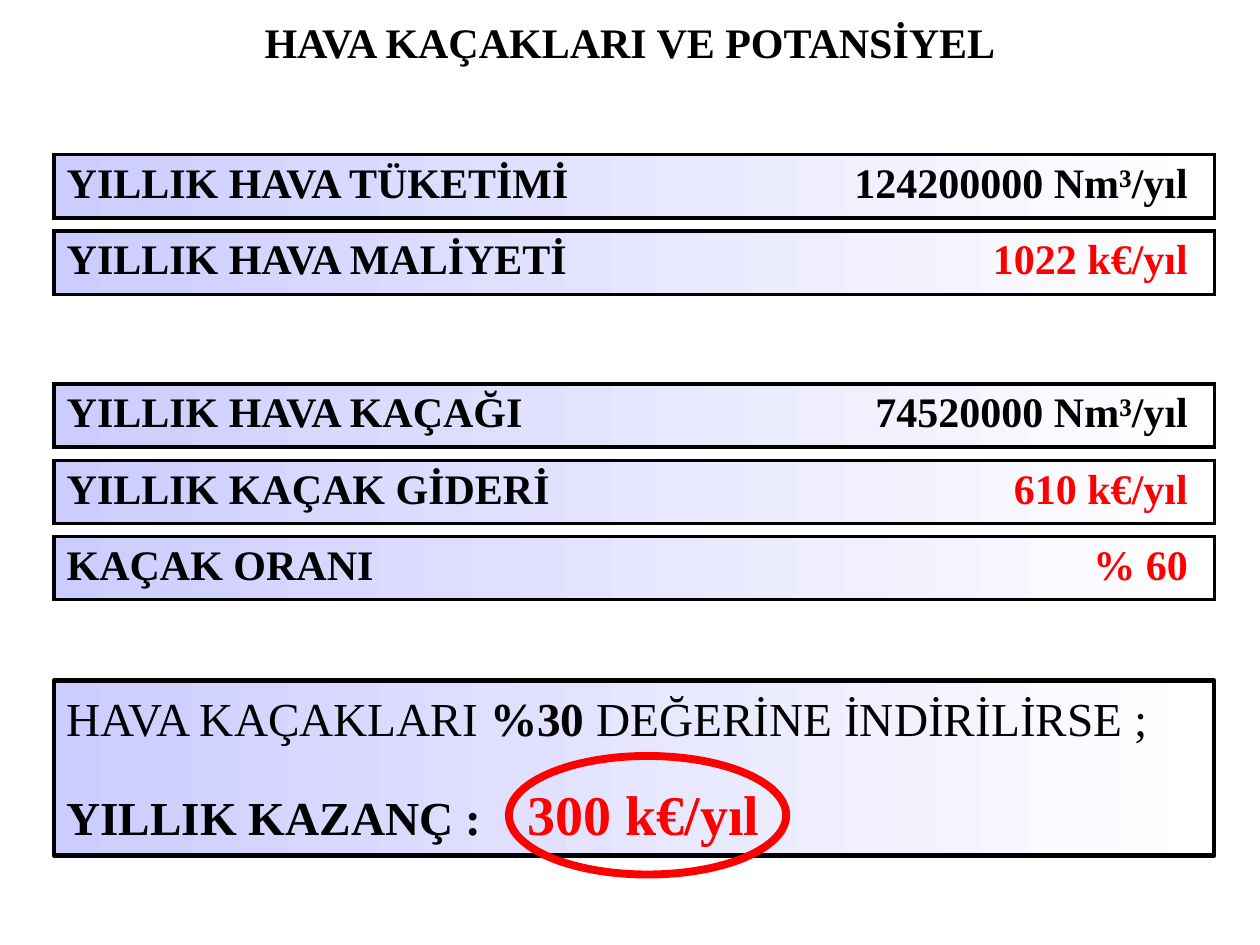
from dataclasses import dataclass

from lxml import etree
from pptx import Presentation
from pptx import util as u
from pptx.dml.color import RGBColor
from pptx.enum import shapes, text
from pptx.oxml.ns import qn


@dataclass(frozen=True)
class Theme:
    font: str = "Times New Roman"
    black: RGBColor = RGBColor(0, 0, 0)
    red: RGBColor = RGBColor(255, 0, 0)
    lilac: RGBColor = RGBColor(204, 204, 255)
    white: RGBColor = RGBColor(255, 255, 255)
    body: int = 24
    note: int = 27
    big: int = 32


class Deck:
    def __init__(self, theme, slide):
        self.theme = theme
        self.slide = slide

    def run(self, para, words, size, color=None, bold=True):
        run = para.add_run()
        run.text = words
        font = run.font
        font.name = self.theme.font
        font.size = u.Pt(size)
        font.bold = bold
        font.color.rgb = color or self.theme.black

    def tab(self, para, place, align):
        """Set one tab stop, measured from the left text edge."""
        stops = etree.SubElement(para._p.get_or_add_pPr(), qn("a:tabLst"))
        etree.SubElement(stops, qn("a:tab"), pos=str(int(place)), algn=align)

    def fade(self, fill):
        """Fill from lilac on the left to white on the right."""
        fill.gradient()
        fill.gradient_angle = 0
        for stop, color in zip(fill.gradient_stops, (self.theme.lilac, self.theme.white)):
            stop.color.rgb = color

    def edge(self, cell, width):
        """Draw a black border on all four sides of a cell."""
        props = cell._tc.get_or_add_tcPr()
        for spot, side in enumerate(("lnL", "lnR", "lnT", "lnB")):
            line = etree.Element(qn(f"a:{side}"), w=str(int(width)))
            fill = etree.SubElement(line, qn("a:solidFill"))
            etree.SubElement(fill, qn("a:srgbClr"), val=str(self.theme.black))
            props.insert(spot, line)

    def title(self, words, *box):
        frame = self.slide.shapes.add_textbox(*map(u.Cm, box)).text_frame
        frame.word_wrap = True
        para = frame.paragraphs[0]
        para.alignment = text.PP_ALIGN.CENTER
        self.run(para, words, self.theme.body)

    def row(self, label, value, color, *box):
        """Add a one-cell table: label on the left, value on the right."""
        table = self.slide.shapes.add_table(1, 1, *map(u.Cm, box)).table
        table.first_row = table.horz_banding = False
        cell = table.cell(0, 0)
        self.fade(cell.fill)
        self.edge(cell, u.Pt(2.25))
        para = cell.text_frame.paragraphs[0]
        self.tab(para, u.Cm(22.6), "r")
        self.run(para, label + "\t", self.theme.body)
        self.run(para, value, self.theme.body, color)

    def shape(self, kind, color, width, *box):
        item = self.slide.shapes.add_shape(kind, *map(u.Cm, box))
        item.shadow.inherit = False
        item.fill.background()
        item.line.color.rgb = color
        item.line.width = u.Pt(width)
        return item

    def gain(self, *box):
        """Add the closing panel with the yearly gain."""
        theme = self.theme
        panel = self.shape(shapes.MSO_SHAPE.RECTANGLE, theme.black, 2.5, *box)
        self.fade(panel.fill)
        frame = panel.text_frame
        frame.vertical_anchor = text.MSO_ANCHOR.MIDDLE
        top, last = frame.paragraphs[0], frame.add_paragraph()
        top.alignment = last.alignment = text.PP_ALIGN.LEFT
        self.run(top, "HAVA KAÇAKLARI ", theme.note, bold=False)
        self.run(top, "%30", theme.note)
        self.run(top, " DEĞERİNE İNDİRİLİRSE ;", theme.note, bold=False)
        last.space_before = u.Pt(19)
        self.tab(last, u.Cm(9.3), "l")
        self.run(last, "YILLIK KAZANÇ :\t", theme.note)
        self.run(last, "300 k€/yıl", theme.big, theme.red)


def main():
    show = Presentation()
    show.slide_width, show.slide_height = u.Cm(25.4), u.Cm(19.05)
    theme = Theme()
    deck = Deck(theme, show.slides.add_slide(show.slide_layouts[6]))
    left, wide, high = 1.09, 23.39, 1.27
    first, step = 3.12, 1.54

    deck.title("HAVA KAÇAKLARI VE POTANSİYEL", 3.7, 0.2, 18, high)
    rows = (
        (0, "YILLIK HAVA TÜKETİMİ", "124200000 Nm³/yıl", theme.black),
        (1, "YILLIK HAVA MALİYETİ", "1022 k€/yıl", theme.red),
        (3, "YILLIK HAVA KAÇAĞI", "74520000 Nm³/yıl", theme.black),
        (4, "YILLIK KAÇAK GİDERİ", "610 k€/yıl", theme.red),
        (5, "KAÇAK ORANI", "% 60", theme.red),
    )
    for slot, label, value, color in rows:
        deck.row(label, value, color, left, first + slot * step, wide, high)
    deck.gain(left, 13.72, wide, 3.53)
    deck.shape(shapes.MSO_SHAPE.OVAL, theme.red, 4.5, 10.26, 15.24, 5.59, 2.39)
    show.save("out.pptx")


if __name__ == "__main__":
    main()
